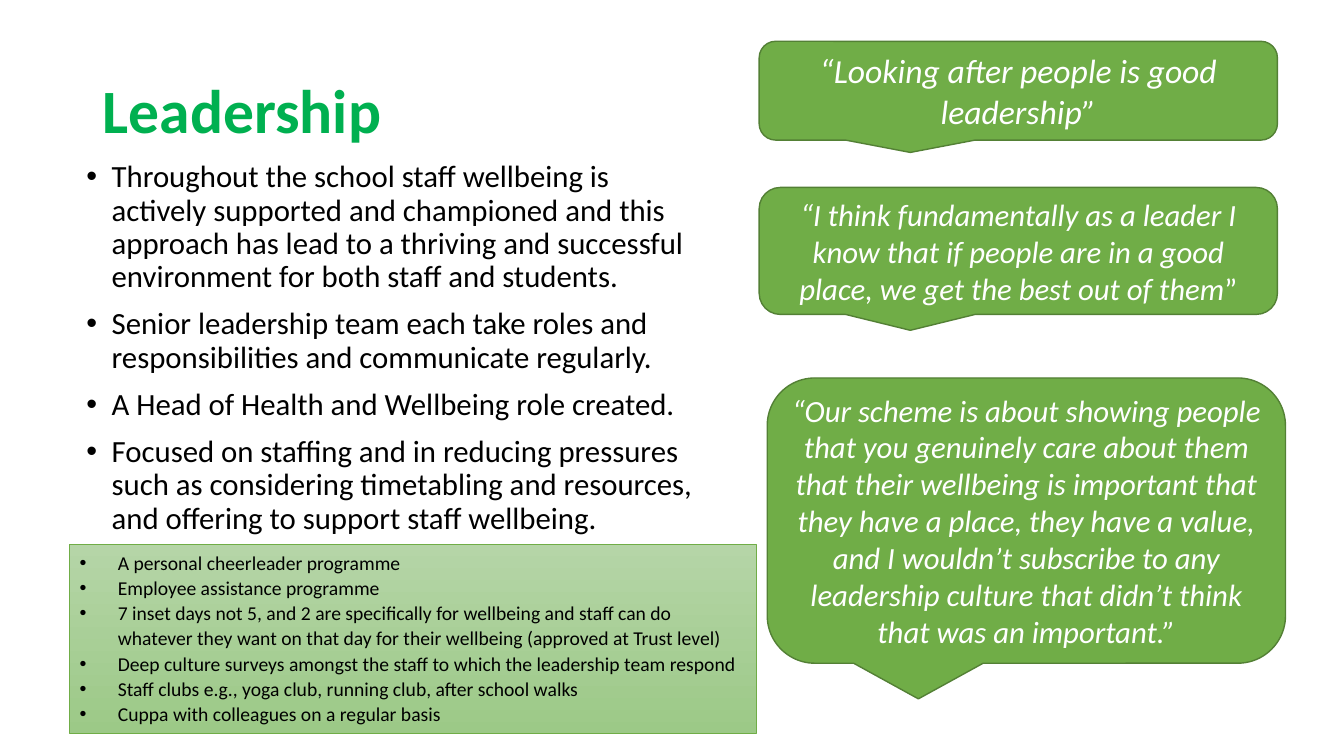
"""Build the Leadership slide with its bullet lists and quote callouts."""
from dataclasses import dataclass

from lxml import etree
from pptx import Presentation
from pptx.dml.color import RGBColor
from pptx.enum.shapes import MSO_SHAPE
from pptx.enum.text import MSO_ANCHOR, PP_ALIGN
from pptx.oxml.ns import qn
from pptx.util import Inches, Pt

BUBBLE = MSO_SHAPE.ROUNDED_RECTANGULAR_CALLOUT
RECT = MSO_SHAPE.RECTANGLE
TOP, MIDDLE = MSO_ANCHOR.TOP, MSO_ANCHOR.MIDDLE
LEFT, CENTER = PP_ALIGN.LEFT, PP_ALIGN.CENTER


@dataclass(frozen=True)
class Theme:
    font: str = "Calibri"
    title: str = "00B050"
    ink: str = "000000"
    white: str = "FFFFFF"
    green: str = "70AD47"
    edge: str = "538035"
    pale: str = "B5D5A7"
    deep: str = "9CC987"
    head: int = 44
    lead: int = 24
    body: int = 22
    note: int = 14


@dataclass(frozen=True)
class Quote:
    left: float
    top: float
    height: float
    size: int
    text: str
    tail: str = ""


THEME = Theme()

POINTS = [
    "Throughout the school staff wellbeing is actively supported and championed and this "
    "approach has lead to a thriving and successful environment for both staff and students.",
    "Senior leadership team each take roles and responsibilities and communicate regularly.",
    "A Head of Health and Wellbeing role created.",
    "Focused on staffing and in reducing pressures such as considering timetabling and "
    "resources, and offering to support staff wellbeing.",
]

PERKS = [
    "A personal cheerleader programme",
    "Employee assistance programme",
    "7 inset days not 5, and 2 are specifically for wellbeing and staff can do whatever "
    "they want on that day for their wellbeing (approved at Trust level)",
    "Deep culture surveys amongst the staff to which the leadership team respond",
    "Staff clubs e.g., yoga club, running club, after school walks",
    "Cuppa with colleagues on a regular basis",
]

QUOTES = [
    Quote(7.53, 0.41, 0.98, THEME.lead, "“Looking after people is good leadership”"),
    Quote(7.53, 1.86, 1.26, THEME.body,
          "“I think fundamentally as a leader I know that if people are in a good place, "
          "we get the best out of them", "”"),
    Quote(7.61, 3.75, 2.83, THEME.body,
          "“Our scheme is about showing people that you genuinely care about them that "
          "their wellbeing is important that they have a place, they have a value, and I "
          "wouldn’t subscribe to any leadership culture that didn’t think that was an "
          "important.”"),
]


def rgb(code: str) -> RGBColor:
    return RGBColor.from_string(code)


def area(left: float, top: float, width: float, height: float) -> list:
    return [Inches(side) for side in (left, top, width, height)]


def write(frame, lines: list[str], *, size: int, color: str = THEME.ink, bold: bool = False,
          italic: bool = False, align=LEFT, anchor=TOP, space: float = 1.0,
          before: int = 0, indent: float = 0, tail: str = "") -> None:
    frame.word_wrap = True
    frame.vertical_anchor = anchor
    for row, line in enumerate(lines):
        para = frame.add_paragraph() if row else frame.paragraphs[0]
        para.alignment = align
        para.line_spacing = space
        para.space_before = Pt(before)
        for text, slant in ((line, italic), (tail, False)):
            if not text:
                continue
            run = para.add_run()
            run.text = text
            font = run.font
            font.name, font.size = THEME.font, Pt(size)
            font.bold, font.italic = bold, slant
            font.color.rgb = rgb(color)
        if indent:
            props = para._p.get_or_add_pPr()
            props.set("marL", str(Inches(indent)))
            props.set("indent", str(-Inches(indent)))
            etree.SubElement(props, qn("a:buFont")).set("typeface", "Arial")
            etree.SubElement(props, qn("a:buChar")).set("char", "•")


def shape(slide, kind, box: list, edge: str, width: float):
    item = slide.shapes.add_shape(kind, *box)
    item.shadow.inherit = False
    item.line.color.rgb = rgb(edge)
    item.line.width = Pt(width)
    return item


def bubble(slide, quote: Quote) -> None:
    box = area(quote.left, quote.top, 5.14, quote.height)
    item = shape(slide, BUBBLE, box, THEME.edge, 1)
    item.fill.solid()
    item.fill.fore_color.rgb = rgb(THEME.green)
    write(item.text_frame, [quote.text], size=quote.size, color=THEME.white,
          italic=True, align=CENTER, anchor=MIDDLE, tail=quote.tail)


def panel(slide) -> None:
    item = shape(slide, RECT, area(0.69, 5.4, 6.81, 1.88), THEME.green, 0.5)
    item.fill.gradient()
    item.fill.gradient_angle = 270
    for stop, code in zip(item.fill.gradient_stops, (THEME.pale, THEME.deep)):
        stop.color.rgb = rgb(code)
    write(item.text_frame, PERKS, size=THEME.note, space=1.07, indent=0.38)


def main() -> None:
    deck = Presentation()
    deck.slide_width, deck.slide_height = Inches(13.33), Inches(7.5)
    slide = deck.slides.add_slide(deck.slide_layouts[5])
    title = slide.shapes.title
    title.left, title.top, title.width, title.height = area(0.92, 0.4, 11.5, 1.45)
    write(title.text_frame, ["Leadership"], size=THEME.head, color=THEME.title,
          bold=True, anchor=MIDDLE, space=0.9)
    body = slide.shapes.add_textbox(*area(0.76, 1.55, 6.3, 3.86))
    write(body.text_frame, POINTS, size=THEME.body, space=0.9, before=10, indent=0.25)
    for quote in QUOTES:
        bubble(slide, quote)
    panel(slide)
    deck.save("out.pptx")


if __name__ == "__main__":
    main()
